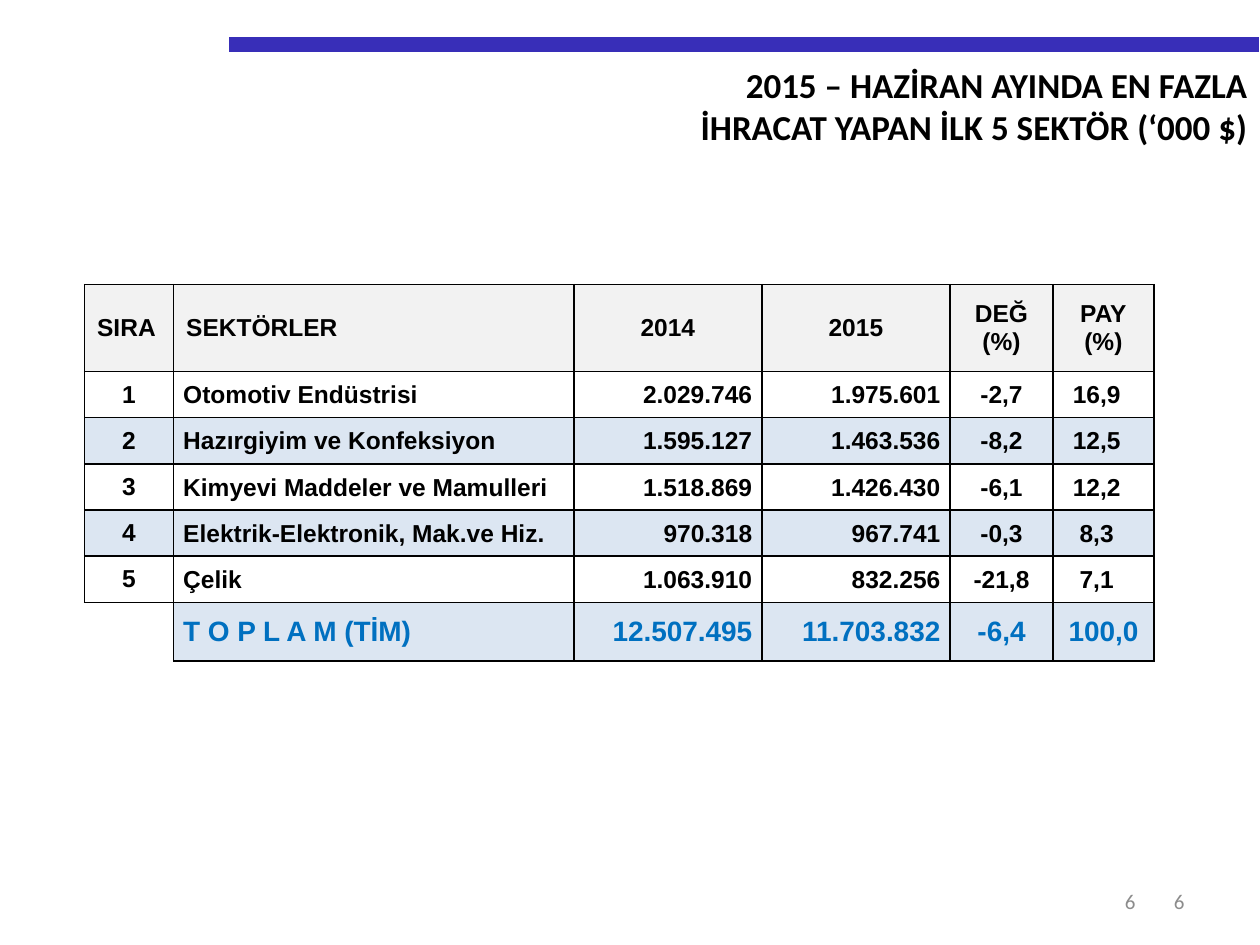
from dataclasses import dataclass

from lxml import etree
from pptx import Presentation
from pptx import util as u
from pptx.dml import color
from pptx.enum import shapes, text
from pptx.oxml import ns

LEFT, CENTER, RIGHT = text.PP_ALIGN.LEFT, text.PP_ALIGN.CENTER, text.PP_ALIGN.RIGHT


@dataclass(frozen=True)
class Theme:
    title_font: str = "Calibri"
    table_font: str = "Arial"
    ink: str = "000000"
    accent: str = "382EB8"
    muted: str = "8C8C8C"
    total: str = "0070C0"
    header_fill: str = "F2F2F2"
    band_fill: str = "DCE6F2"
    title_size: float = 20
    number_size: float = 12
    body_size: float = 14
    total_size: float = 16


def write_text(frame, content, *, font, size, ink, bold=False, align=LEFT):
    for index, line in enumerate(content.split("\n")):
        paragraph = frame.paragraphs[0] if index == 0 else frame.add_paragraph()
        paragraph.alignment = align
        run = paragraph.add_run()
        run.text = line
        run.font.name = font
        run.font.size = u.Pt(size)
        run.font.bold = bold
        run.font.color.rgb = color.RGBColor.from_string(ink)


def set_borders(cell, ink, hidden=()):
    properties = cell._tc.get_or_add_tcPr()
    for side in "LRTB":
        border = etree.SubElement(properties, ns.qn(f"a:ln{side}"), w=str(u.Pt(1)))
        if side in hidden:
            etree.SubElement(border, ns.qn("a:noFill"))
        else:
            fill = etree.SubElement(border, ns.qn("a:solidFill"))
            etree.SubElement(fill, ns.qn("a:srgbClr"), val=ink)


class SlideBuilder:
    def __init__(self, slide, theme):
        self.slide = slide
        self.theme = theme

    def add_text(self, content, left, top, width, height, anchor, **style):
        box = self.slide.shapes.add_textbox(*map(u.Pt, (left, top, width, height)))
        frame = box.text_frame
        frame.word_wrap = True
        frame.vertical_anchor = anchor
        write_text(frame, content, font=self.theme.title_font, **style)

    def add_page_number(self, number, right):
        width = 160
        self.add_text(number, right - width, 500.5, width, 28.75, text.MSO_ANCHOR.MIDDLE,
                      size=self.theme.number_size, ink=self.theme.muted, align=RIGHT)

    def add_rule(self, left, right, y, weight):
        line = self.slide.shapes.add_connector(
            shapes.MSO_CONNECTOR.STRAIGHT, *map(u.Pt, (left, y, right, y)))
        line.line.color.rgb = color.RGBColor.from_string(self.theme.accent)
        line.line.width = u.Pt(weight)
        etree.SubElement(line._element.spPr, ns.qn("a:effectLst"))

    def add_table(self, rows, left, top, widths, heights):
        frame = self.slide.shapes.add_table(
            len(rows), len(widths),
            *map(u.Pt, (left, top, sum(widths), sum(heights))))
        table = frame.table
        table.first_row = table.horz_banding = False
        for column, width in zip(table.columns, widths):
            column.width = u.Pt(width)
        for row, height in zip(table.rows, heights):
            row.height = u.Pt(height)
        last = len(rows) - 1
        for row_index, values in enumerate(rows):
            for column_index, value in enumerate(values):
                self.fill_cell(table.cell(row_index, column_index), value,
                               row_index, column_index, last)

    def fill_cell(self, cell, value, row, column, last):
        theme = self.theme
        header, total = row == 0, row == last
        cell.vertical_anchor = text.MSO_ANCHOR.MIDDLE
        set_borders(cell, theme.ink, hidden="" if value else "LB")
        if value and row % 2 == 0:
            cell.fill.solid()
            fill = theme.header_fill if header else theme.band_fill
            cell.fill.fore_color.rgb = color.RGBColor.from_string(fill)
        else:
            cell.fill.background()
        if not value:
            return
        if header:
            align = LEFT if column < 2 else CENTER
        else:
            align = (CENTER, LEFT, RIGHT, RIGHT, CENTER, CENTER)[column]
        if column and not header:
            share = column == 5 and not total
            cell.margin_left = u.Pt(5.5 if align == LEFT else 0.75)
            cell.margin_right = u.Pt(5.5 if align == RIGHT else 8.5 if share else 0.75)
            cell.margin_top, cell.margin_bottom = u.Pt(0.75), u.Pt(0)
        write_text(cell.text_frame, value, font=theme.table_font, bold=True, align=align,
                   size=theme.total_size if total else theme.body_size,
                   ink=theme.total if total else theme.ink)


SECTORS = [
    ("SIRA", "SEKTÖRLER", "2014", "2015", "DEĞ\n(%)", "PAY\n(%)"),
    ("1", "Otomotiv Endüstrisi", "2.029.746", "1.975.601", "-2,7", "16,9"),
    ("2", "Hazırgiyim ve Konfeksiyon", "1.595.127", "1.463.536", "-8,2", "12,5"),
    ("3", "Kimyevi Maddeler ve Mamulleri", "1.518.869", "1.426.430", "-6,1", "12,2"),
    ("4", "Elektrik-Elektronik, Mak.ve Hiz.", "970.318", "967.741", "-0,3", "8,3"),
    ("5", "Çelik", "1.063.910", "832.256", "-21,8", "7,1"),
    ("", "T O P L A M (TİM)", "12.507.495", "11.703.832", "-6,4", "100,0"),
]


def main():
    presentation = Presentation()
    presentation.slide_width, presentation.slide_height = u.Pt(720), u.Pt(540)
    slide = presentation.slides.add_slide(presentation.slide_layouts[6])
    theme = Theme()
    builder = SlideBuilder(slide, theme)
    builder.add_page_number("6", right=684)
    builder.add_rule(131, 719.5, 25.4, 8.5)
    builder.add_page_number("6", right=656)
    builder.add_text("2015 – HAZİRAN AYINDA EN FAZLA\nİHRACAT YAPAN İLK 5 SEKTÖR (‘000 $)",
                     76.5, 32.5, 643.5, 55.5, text.MSO_ANCHOR.TOP,
                     size=theme.title_size, ink=theme.ink, bold=True, align=RIGHT)
    builder.add_table(SECTORS, 48.3, 162.6,
                      widths=[50.9, 228.7, 107.5, 107.5, 58.9, 57.6],
                      heights=[49.7] + [26.4] * 5 + [33.4])
    presentation.save("out.pptx")


if __name__ == "__main__":
    main()
